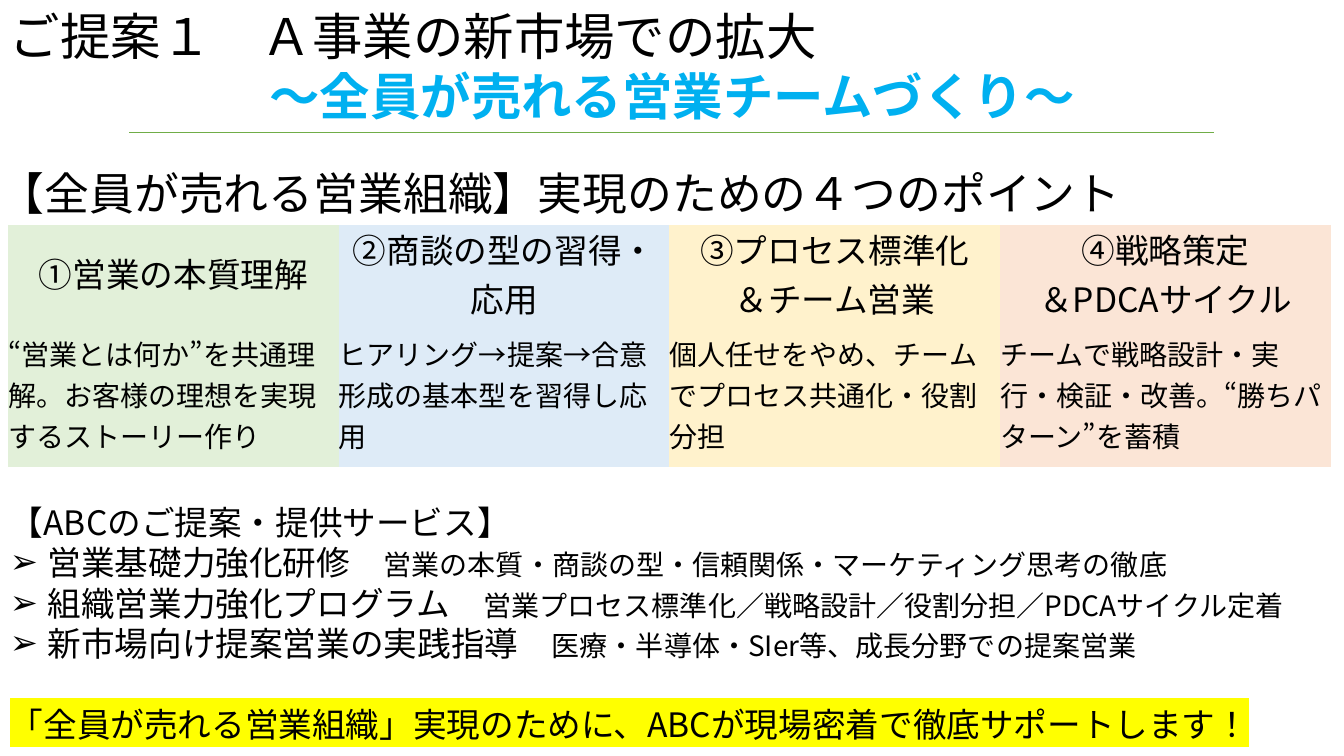
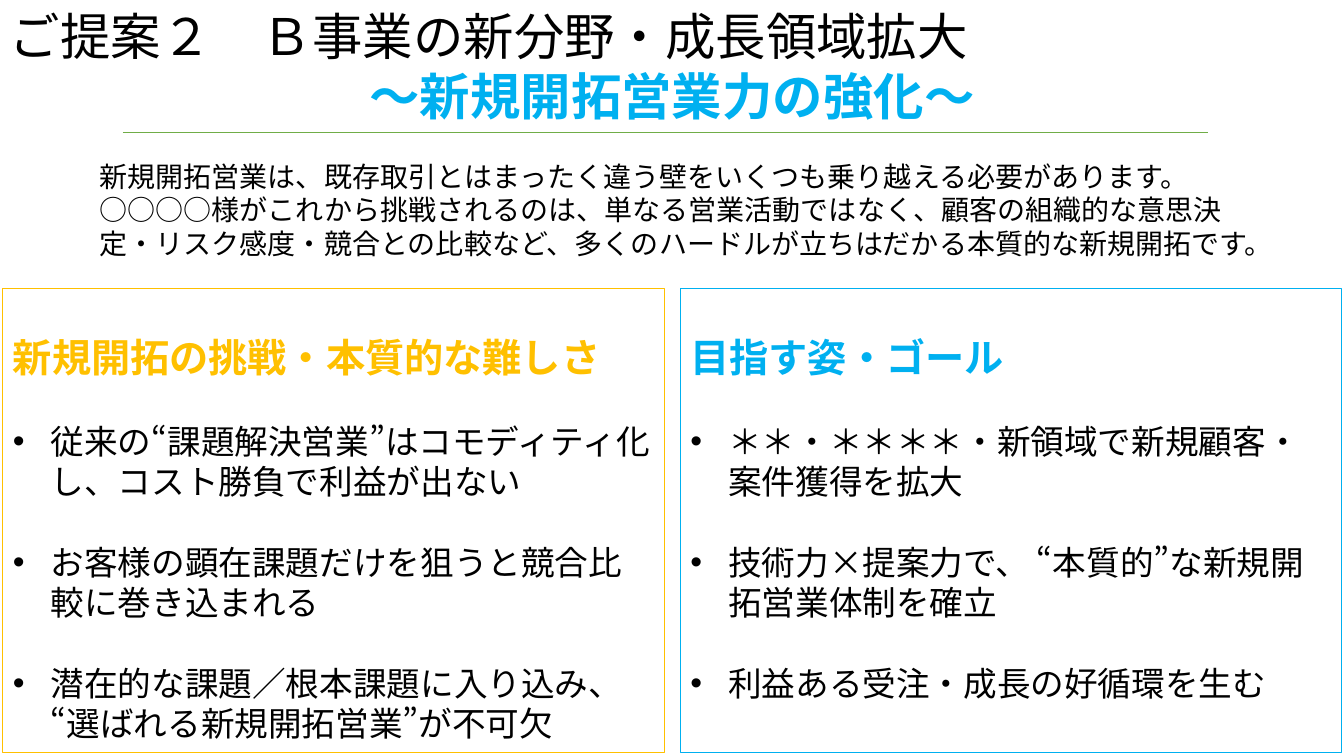
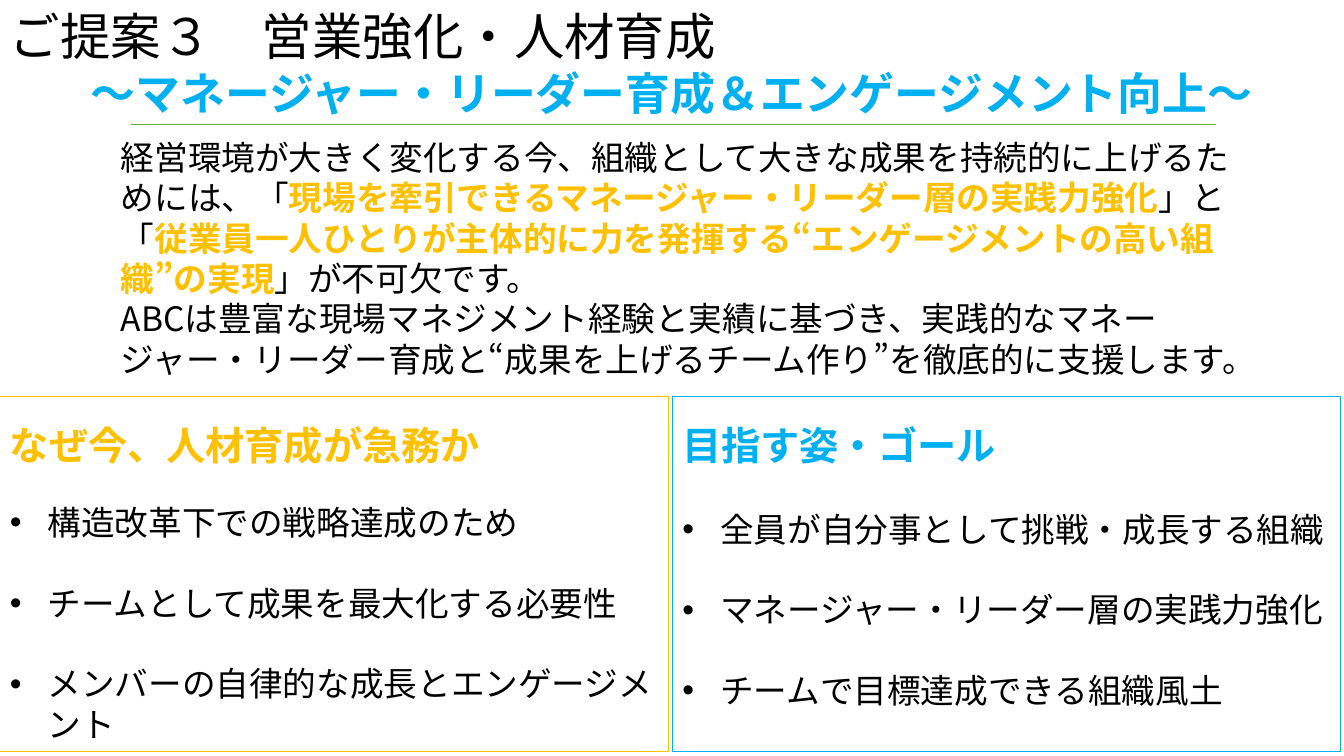
from lxml.etree import SubElement
from pptx import Presentation
from pptx.dml.color import RGBColor
from pptx.enum.lang import MSO_LANGUAGE_ID as Language
from pptx.enum.shapes import MSO_CONNECTOR as Connector, MSO_SHAPE as Shape
from pptx.enum.text import MSO_ANCHOR as Anchor, PP_ALIGN as Align
from pptx.oxml import parse_xml
from pptx.oxml.ns import nsdecls, qn
from pptx.util import Inches, Pt

FONT = "Noto Sans CJK JP"
COLOURS = {
    "text": "000000", "blue": "00B0F0", "gold": "FFC000", "rule": "70AD47",
    "marker": "FFFF00", "green_cell": "E2F0D9", "blue_cell": "DEEBF7",
    "gold_cell": "FFF2CC", "red_cell": "FBE5D6",
}
LINE = 1.2  # height of a line, in font sizes
HANG = Pt(27)


def rgb(name):
    return RGBColor.from_string(COLOURS[name])


def set_all(target, values):
    for name, value in values.items():
        setattr(target, name, value)


def add_span(para, text, size, colour="text", bold=False, marker=None):
    span = para.add_run()
    span.text = text
    set_all(span.font, {"size": Pt(size), "bold": bold, "name": FONT,
                        "language_id": Language.JAPANESE})
    span.font.color.rgb = rgb(colour)
    latin = span.font._element.find(qn("a:latin"))
    latin.addnext(parse_xml(f'<a:ea {nsdecls("a")} typeface="{FONT}"/>'))
    if marker:
        latin.addprevious(parse_xml(
            f'<a:highlight {nsdecls("a")}><a:srgbClr val="{COLOURS[marker]}"/></a:highlight>'))


def add_para(frame, spans, align=Align.LEFT, bullet=None, before=0):
    """Add one paragraph; each span is (text, size, and optional format)."""
    first = frame.paragraphs[0]
    para = frame.add_paragraph() if first.runs else first
    set_all(para, {"alignment": align, "line_spacing": 1.0,
                   "space_before": Pt(before), "space_after": Pt(0)})
    if bullet:
        props = para._p.get_or_add_pPr()
        props.set("marL", str(HANG))
        props.set("indent", str(-HANG))
        SubElement(props, qn("a:buFont"), typeface="Arial")
        SubElement(props, qn("a:buChar"), char=bullet)
    for span in spans:
        add_span(para, *span)


def set_frame(frame, top_inset=0.05):
    set_all(frame, {"word_wrap": True, "vertical_anchor": Anchor.TOP,
                    "margin_left": Inches(0.1), "margin_right": Inches(0.1),
                    "margin_top": Inches(top_inset), "margin_bottom": Inches(0.05)})


def add_text(page, left, top, width, height):
    box = page.shapes.add_textbox(*map(Inches, (left, top, width, height)))
    set_frame(box.text_frame)
    return box.text_frame


def add_title(page, title, subtitle, rule_left, rule_top=1.31, subtitle_size=36):
    frame = add_text(page, 0, 0, 13.33, rule_top)
    add_para(frame, [(title, 36)])
    add_para(frame, [(subtitle, subtitle_size, "blue", True)], Align.CENTER)
    rule = page.shapes.add_connector(
        Connector.STRAIGHT, Inches(rule_left), Inches(rule_top),
        Inches(rule_left + 10.76), Inches(rule_top))
    rule.line.color.rgb = rgb("rule")
    rule.line.width = Pt(0.5)
    SubElement(rule._element.spPr, qn("a:effectLst"))


def add_panel(page, area, colour, heading, points, lead=24, gap=24):
    """Add an outlined panel; lead and gap are font sizes of the space around its heading."""
    panel = page.shapes.add_shape(Shape.RECTANGLE, *map(Inches, area))
    panel.shadow.inherit = False
    panel.fill.background()
    panel.line.color.rgb = rgb(colour)
    panel.line.width = Pt(0.75)
    frame = panel.text_frame
    set_frame(frame, 0.05 + lead * LINE / 72)
    add_para(frame, [(heading, 28, colour, True)])
    for index, point in enumerate(points):
        space = 24 if index else gap
        add_para(frame, [(point, 24)], bullet="•", before=space * LINE)


def add_points_table(page, columns):
    """Add a table of columns, each (fill, heading lines, description)."""
    table = page.shapes.add_table(2, len(columns), Inches(0.08), Inches(2.23),
                                  Inches(13.12), Inches(2.4)).table
    for row, height in zip(table.rows, (0.96, 1.44)):
        row.height = Inches(height)
    for index, (fill, heading, description) in enumerate(columns):
        table.columns[index].width = Inches(3.28)
        rows = ((heading, 24, Align.CENTER), ([description], 20, Align.LEFT))
        for row, (lines, size, align) in enumerate(rows):
            cell = table.cell(row, index)
            set_all(cell, {"margin_left": 0, "margin_right": 0, "margin_top": 0,
                           "margin_bottom": 0, "vertical_anchor": Anchor.MIDDLE})
            cell.fill.solid()
            cell.fill.fore_color.rgb = rgb(fill)
            for line in lines:
                add_para(cell.text_frame, [(line, size)], align)
    borders = ("a:lnL", "a:lnR", "a:lnT", "a:lnB")
    for cell in table.iter_cells():
        props = cell._tc.get_or_add_tcPr()
        for index, border in enumerate(borders):
            props.insert(index, parse_xml(
                f'<{border} {nsdecls("a")} w="0"><a:noFill/></{border}>'))


def build_sales_team(page):
    add_title(page, "ご提案１　Ａ事業の新市場での拡大", "～全員が売れる営業チームづくり～", 1.28)
    add_para(add_text(page, -0.1, 1.59, 12.9, 0.64),
             [("【全員が売れる営業組織】実現のための４つのポイント", 32)])
    add_points_table(page, [
        ("green_cell", ["①営業の本質理解"],
         "“営業とは何か”を共通理解。お客様の理想を実現するストーリー作り"),
        ("blue_cell", ["②商談の型の習得・応用"],
         "ヒアリング→提案→合意形成の基本型を習得し応用"),
        ("gold_cell", ["③プロセス標準化", "＆チーム営業"],
         "個人任せをやめ、チームでプロセス共通化・役割分担"),
        ("red_cell", ["④戦略策定", "＆PDCAサイクル"],
         "チームで戦略設計・実行・検証・改善。“勝ちパターン”を蓄積"),
    ])
    services = [
        ("営業基礎力強化研修　", "営業の本質・商談の型・信頼関係・マーケティング思考の徹底"),
        ("組織営業力強化プログラム　", "営業プロセス標準化／戦略設計／役割分担／PDCAサイクル定着"),
        ("新市場向け提案営業の実践指導　", "医療・半導体・SIer等、成長分野での提案営業"),
    ]
    frame = add_text(page, 0, 4.93, 13.2, 2.52)
    add_para(frame, [("【ABCのご提案・提供サービス】", 24)])
    for service, detail in services:
        add_para(frame, [(service, 24), (detail, 20)], bullet="➢")
    add_para(frame, [("「全員が売れる営業組織」実現のために、ABCが現場密着で徹底サポートします！",
                      24, "text", False, "marker")], before=24 * LINE)


def build_new_clients(page):
    add_title(page, "ご提案２　Ｂ事業の新分野・成長領域拡大", "～新規開拓営業力の強化～", 1.22)
    add_para(add_text(page, 0.89, 1.53, 11.6, 1.11), [(
        "新規開拓営業は、既存取引とはまったく違う壁をいくつも乗り越える必要があります。"
        "○○○○様がこれから挑戦されるのは、単なる営業活動ではなく、顧客の組織的な意思決定・"
        "リスク感度・競合との比較など、多くのハードルが立ちはだかる本質的な新規開拓です。", 20)])
    add_panel(page, (0.03, 2.86, 6.56, 4.61), "gold", "新規開拓の挑戦・本質的な難しさ", [
        "従来の“課題解決営業”はコモディティ化し、コスト勝負で利益が出ない",
        "お客様の顕在課題だけを狙うと競合比較に巻き込まれる",
        "潜在的な課題／根本課題に入り込み、“選ばれる新規開拓営業”が不可欠",
    ])
    add_panel(page, (6.75, 2.86, 6.56, 4.61), "blue", "目指す姿・ゴール", [
        "＊＊・＊＊＊＊・新領域で新規顧客・案件獲得を拡大",
        "技術力×提案力で、 “本質的”な新規開拓営業体制を確立",
        "利益ある受注・成長の好循環を生む",
    ])


def build_leaders(page):
    add_title(page, "ご提案３　営業強化・人材育成",
              "～マネージャー・リーダー育成＆エンゲージメント向上～", 1.3, 1.23, 32)
    frame = add_text(page, 1.1, 1.31, 11.22, 2.52)
    add_para(frame, [
        ("経営環境が大きく変化する今、組織として大きな成果を持続的に上げるためには、「", 24),
        ("現場を牽引できるマネージャー・リーダー層の実践力強化", 24, "gold", True),
        ("」と「", 24),
        ("従業員一人ひとりが主体的に力を発揮する“エンゲージメントの高い組織”の実現", 24, "gold", True),
        ("」が不可欠です。", 24),
    ])
    add_para(frame, [(
        "ABCは豊富な現場マネジメント経験と実績に基づき、実践的なマネージャー・リーダー育成と"
        "“成果を上げるチーム作り”を徹底的に支援します。", 24)])
    add_panel(page, (0, 3.93, 6.63, 3.53), "gold", "なぜ今、人材育成が急務か", [
        "構造改革下での戦略達成のため",
        "チームとして成果を最大化する必要性",
        "メンバーの自律的な成長とエンゲージメント",
    ], lead=12, gap=20)
    add_panel(page, (6.67, 3.93, 6.63, 3.53), "blue", "目指す姿・ゴール", [
        "全員が自分事として挑戦・成長する組織",
        "マネージャー・リーダー層の実践力強化",
        "チームで目標達成できる組織風土",
    ], lead=12)


def main():
    deck = Presentation()
    set_all(deck, {"slide_width": Inches(13.33), "slide_height": Inches(7.5)})
    for build in (build_sales_team, build_new_clients, build_leaders):
        build(deck.slides.add_slide(deck.slide_layouts[6]))
    deck.save("out.pptx")


if __name__ == "__main__":
    main()
